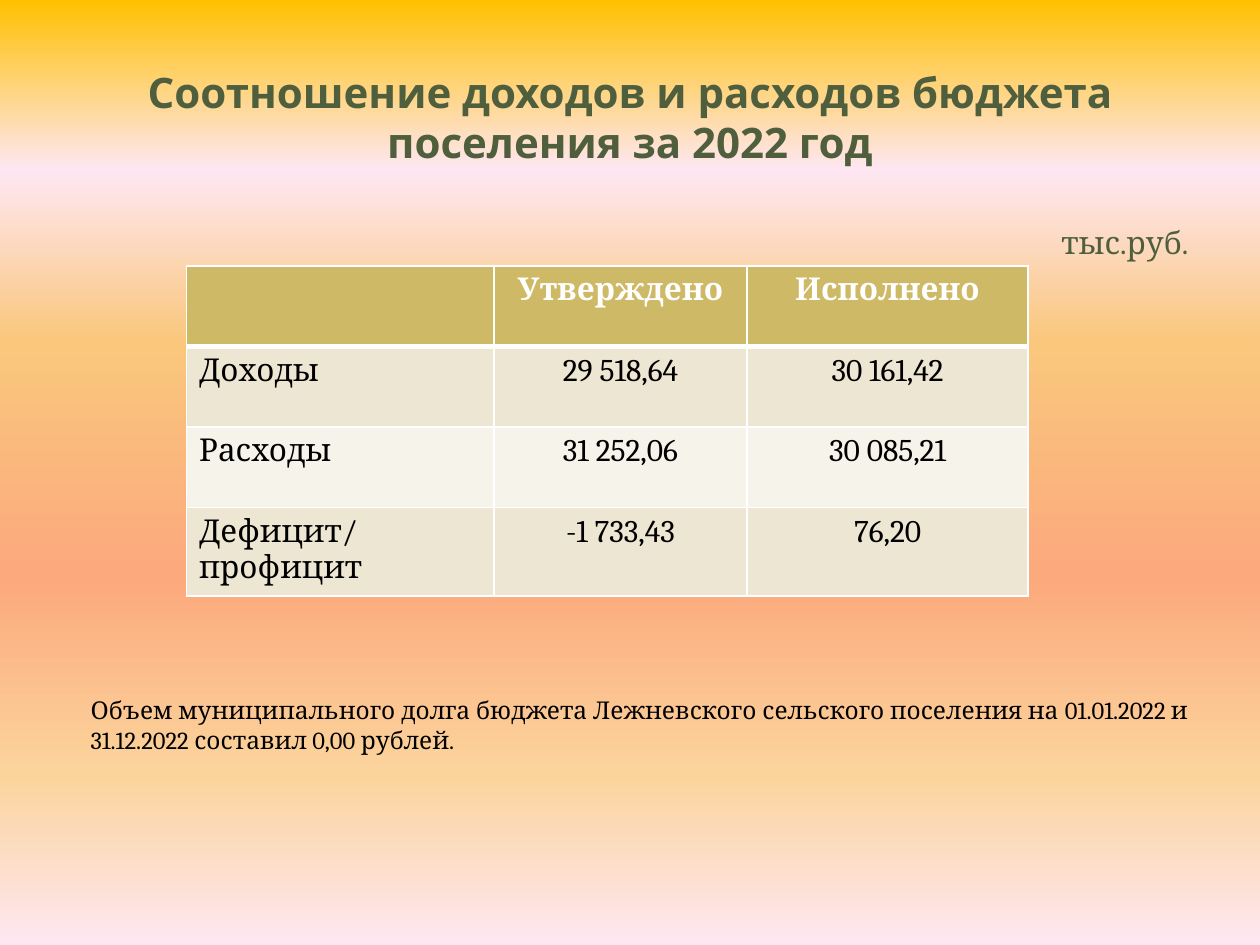
from lxml.etree import SubElement
from pptx import Presentation
from pptx.dml.color import RGBColor
from pptx.enum.text import MSO_ANCHOR, PP_ALIGN
from pptx.oxml.ns import qn
from pptx.util import Inches, Pt


def color(value):
    return RGBColor.from_string(value)


def write(frame, text, align, font_format, ink):
    frame.word_wrap = True
    paragraph = frame.paragraphs[0]
    paragraph.alignment = align
    run = paragraph.add_run()
    run.text = text
    for name, value in font_format.items():
        setattr(run.font, name, value)
    run.font.color.rgb = color(ink)


prs = Presentation()
prs.slide_width, prs.slide_height = Inches(10), Inches(7.5)
slide = prs.slides.add_slide(prs.slide_layouts[6])

backdrop = slide.background.fill
backdrop.gradient()
backdrop.gradient_angle = 270
stops = next(slide.element.iter(qn("a:gsLst")))
for stop in list(stops):
    stops.remove(stop)
for percent, shade in [(0, "FFC000"), (18, "FEE7F2"), (36, "FAC77D"),
                       (61, "FBA97D"), (82, "FBD49C"), (100, "FEE7F2")]:
    stop = SubElement(stops, qn("a:gs"), pos=str(percent * 1000))
    SubElement(stop, qn("a:srgbClr"), val=shade)

body = {"name": "Cambria", "size": Pt(18), "bold": False}
heading = {"name": "Open Sans", "size": Pt(24), "bold": True}
captions = [
    ((0.5, 0.3, 9, 1.25), "Соотношение доходов и расходов бюджета поселения за 2022 год",
     PP_ALIGN.CENTER, heading, "4F5E3C", MSO_ANCHOR.MIDDLE),
    ((7.58, 1.72, 1.95, 0.4), "тыс.руб.",
     PP_ALIGN.RIGHT, body, "4F5E3C", MSO_ANCHOR.TOP),
    ((0.62, 5.47, 8.91, 0.57),
     "Объем муниципального долга бюджета Лежневского сельского поселения "
     "на 01.01.2022 и 31.12.2022 составил 0,00 рублей.",
     PP_ALIGN.JUSTIFY, body | {"size": Pt(14)}, "000000", MSO_ANCHOR.TOP),
]
for place, text, align, font_format, ink, anchor in captions:
    caption = slide.shapes.add_textbox(*map(Inches, place)).text_frame
    caption.vertical_anchor = anchor
    write(caption, text, align, font_format, ink)

budget_rows = [
    ("", "Утверждено", "Исполнено"),
    ("Доходы", "29 518,64", "30 161,42"),
    ("Расходы", "31 252,06", "30 085,21"),
    ("Дефицит/ профицит", "-1 733,43", "76,20"),
]
row_fills = ["CEB966", "EDE6D3", "F6F3EA", "EDE6D3"]
budget = slide.shapes.add_table(
    4, 3, Inches(1.48), Inches(2.11), Inches(6.68), Inches(2.58)).table
for column, width in zip(budget.columns, (2.44, 2.01, 2.23)):
    column.width = Inches(width)

for r, (values, row_fill) in enumerate(zip(budget_rows, row_fills)):
    budget.rows[r].height = Inches(0.64)
    is_header = r == 0
    for c, value in enumerate(values):
        cell = budget.cell(r, c)
        properties = cell._tc.get_or_add_tcPr()
        for side in ("lnL", "lnR", "lnT", "lnB"):
            thick = (r, side) in ((0, "lnB"), (1, "lnT"))
            border = SubElement(properties, qn(f"a:{side}"), w=str(Pt(3 if thick else 1)))
            SubElement(SubElement(border, qn("a:solidFill")), qn("a:srgbClr"), val="FFFFFF")
        cell.fill.solid()
        cell.fill.fore_color.rgb = color(row_fill)
        if value:
            write(cell.text_frame, value, PP_ALIGN.CENTER if c else PP_ALIGN.LEFT,
                  body | {"bold": is_header}, "FFFFFF" if is_header else "000000")

prs.save("out.pptx")
